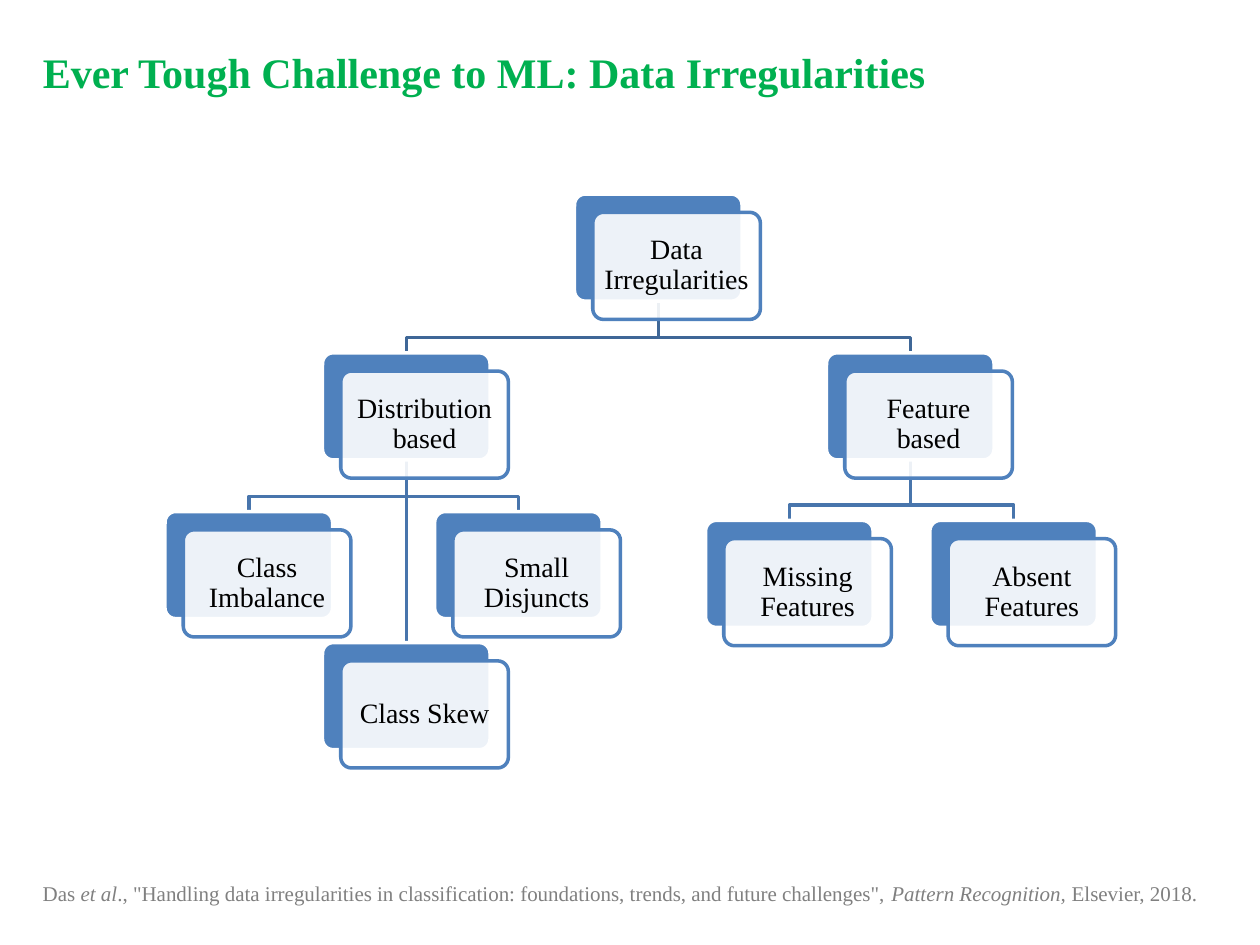
from pptx import Presentation
from pptx.dml.color import RGBColor as Rgb
from pptx.enum.shapes import MSO_SHAPE as Shape
from pptx.enum.text import MSO_ANCHOR as Anchor, PP_ALIGN as Align
from pptx.oxml.ns import qn
from pptx.util import Inches, Pt
from lxml import etree

COLORS = {
    "title": "00B050", "blue": "4F81BD", "white": "FFFFFF", "text": "000000",
    "cite": "808080", "top": "3F6797", "low": "4875AC",
}
FACE = "Times New Roman"
WIDE, HIGH = 1.33, 0.85
SHIFT = 0.145
DROP = 0.12

# label: (left, top, parent)
NODES = {
    "Data Irregularities": (4.56, 1.54, None),
    "Distribution based": (2.56, 2.8, "Data Irregularities"),
    "Class Imbalance": (1.31, 4.06, "Distribution based"),
    "Class Skew": (2.56, 5.1, "Distribution based"),
    "Small Disjuncts": (3.45, 4.06, "Distribution based"),
    "Feature based": (6.56, 2.8, "Data Irregularities"),
    "Missing Features": (5.6, 4.13, "Feature based"),
    "Absent Features": (7.38, 4.13, "Feature based"),
}
CITE = [
    ("Das ", False),
    ("et al", True),
    ('., "Handling data irregularities in classification: foundations, '
     'trends, and future challenges", ', False),
    ("Pattern Recognition, ", True),
    ("Elsevier, 2018.", False),
]


def rgb(name):
    return Rgb.from_string(COLORS[name])


def apply(item, form):
    for key, val in form.items():
        setattr(item, key, val)


def style(font, size, color, **form):
    apply(font, {"name": FACE, "size": Pt(size), **form})
    font.color.rgb = rgb(color)


def stroke(shape, color):
    shape.line.color.rgb = rgb(color)
    shape.line.width = Pt(2)
    shape.shadow.inherit = False


def add_title(slide, left, top, wide, high):
    title = slide.shapes.title
    apply(title, {"left": Inches(left), "top": Inches(top),
                  "width": Inches(wide), "height": Inches(high)})
    frame = title.text_frame
    frame.text = "Ever Tough Challenge to ML: Data Irregularities"
    frame.vertical_anchor = Anchor.MIDDLE
    para = frame.paragraphs[0]
    para.alignment = Align.LEFT
    style(para.runs[0].font, 24, "title", bold=True)


def add_link(slide, start, end, color):
    """Elbow line from a parent's foot to a child's head."""
    (x1, y1), (x2, y2) = start, end
    bend = y2 - DROP
    points = [(x2, y2)] if x1 == x2 else [(x1, bend), (x2, bend), (x2, y2)]
    build = slide.shapes.build_freeform(Inches(x1), Inches(y1))
    build.add_line_segments([(Inches(x), Inches(y)) for x, y in points],
                            close=False)
    link = build.convert_to_shape()
    link.fill.background()
    stroke(link, color)


def add_plate(slide, left, top, fill, line):
    plate = slide.shapes.add_shape(
        Shape.ROUNDED_RECTANGLE, Inches(left), Inches(top),
        Inches(WIDE), Inches(HIGH))
    plate.adjustments[0] = 0.1
    plate.fill.solid()
    plate.fill.fore_color.rgb = rgb(fill)
    stroke(plate, line)
    return plate


def add_node(slide, label, left, top):
    """Blue plate with a see-through label card in front."""
    add_plate(slide, left, top, "blue", "white")
    card = add_plate(slide, left + SHIFT, top + SHIFT, "white", "blue")
    tint = card.fill._xPr.find(".//" + qn("a:srgbClr"))
    etree.SubElement(tint, qn("a:alpha"), val="90000")
    frame = card.text_frame
    pad = Inches(0.06)
    apply(frame, {"text": label, "word_wrap": True,
                  "vertical_anchor": Anchor.MIDDLE,
                  "margin_left": pad, "margin_right": pad,
                  "margin_top": pad, "margin_bottom": pad})
    para = frame.paragraphs[0]
    apply(para, {"alignment": Align.CENTER, "line_spacing": 0.9})
    style(para.runs[0].font, 16, "text")


def add_tree(slide):
    mid = WIDE / 2
    for left, top, parent in NODES.values():
        if parent:
            px, py, root = NODES[parent]
            add_link(slide, (px + mid, py + HIGH), (left + mid, top),
                     "low" if root else "top")
    for label, (left, top, _) in NODES.items():
        add_node(slide, label, left, top)


def add_cite(slide, left, top, wide, high):
    box = slide.shapes.add_textbox(Inches(left), Inches(top),
                                   Inches(wide), Inches(high))
    box.text_frame.word_wrap = True
    para = box.text_frame.paragraphs[0]
    for text, slant in CITE:
        run = para.add_run()
        run.text = text
        style(run.font, 12, "cite", italic=slant)


def main():
    deck = Presentation()
    deck.slide_width, deck.slide_height = Inches(10), Inches(7.5)
    slide = deck.slides.add_slide(deck.slide_layouts[5])
    add_title(slide, 0.24, 0.15, 9, 0.83)
    add_tree(slide)
    add_cite(slide, 0.24, 6.94, 9.58, 0.3)
    deck.save("out.pptx")


if __name__ == "__main__":
    main()
